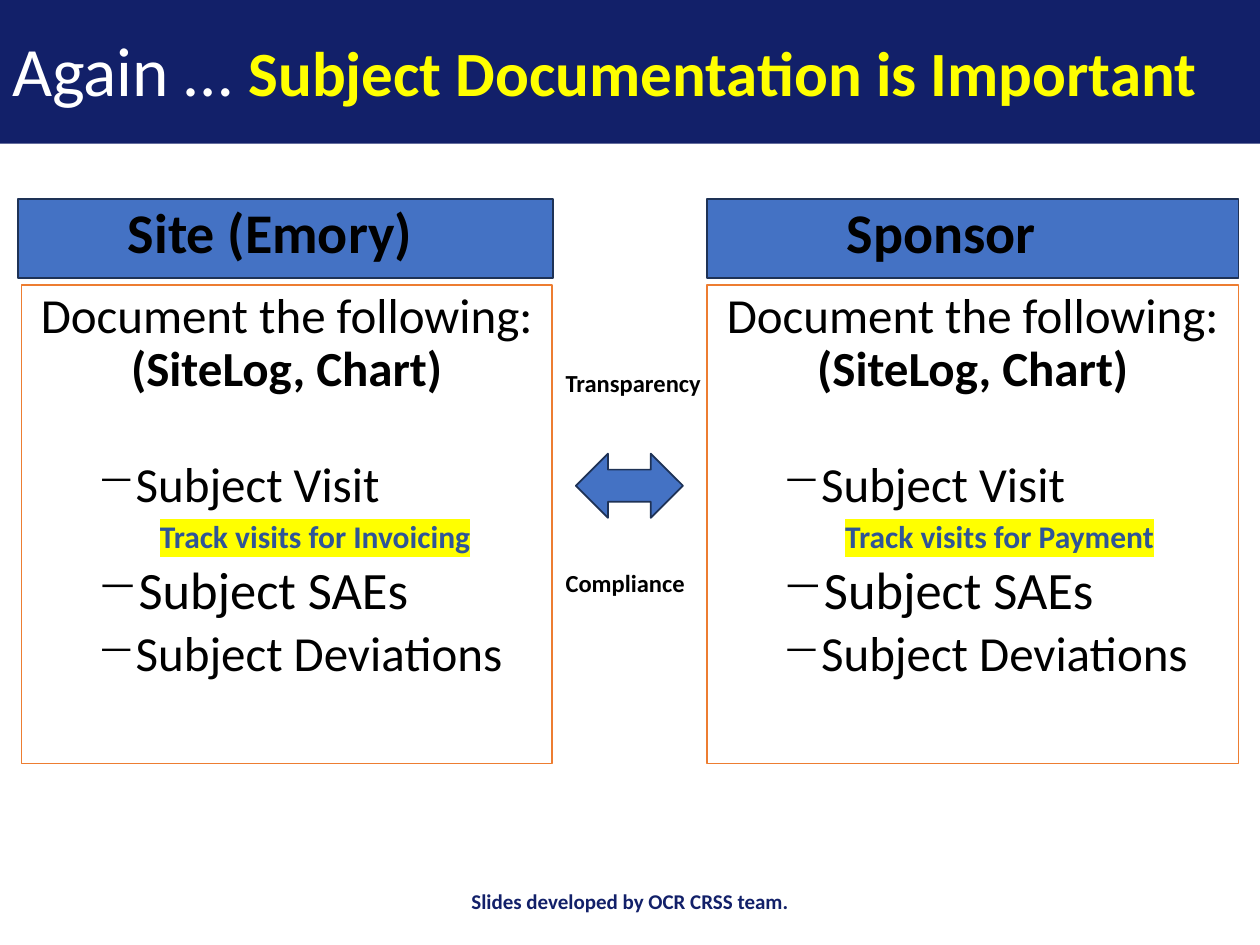
from lxml import etree
from pptx import Presentation
from pptx import util as u
from pptx.dml.color import RGBColor
from pptx.enum import shapes, text
from pptx.oxml import ns

NAVY, BLUE, EDGE, ORANGE = "122069", "4472C4", "1E3256", "ED7D31"
BLACK, WHITE, YELLOW, STEEL = "000000", "FFFFFF", "FFFF00", "2F5597"
CENTER = text.PP_ALIGN.CENTER
MIDDLE = text.MSO_ANCHOR.MIDDLE
TOP = text.MSO_ANCHOR.TOP


def color(value):
    return RGBColor.from_string(value)


def add_run(paragraph, content, size=28, ink=BLACK, bold=False, highlight=None):
    run = paragraph.add_run()
    run.text = content
    font = run.font
    font.name, font.size, font.bold = "Calibri", u.Pt(size), bold
    font.color.rgb = color(ink)
    if highlight:
        mark = etree.Element(ns.qn("a:highlight"))
        etree.SubElement(mark, ns.qn("a:srgbClr"), val=highlight)
        font.fill._xPr.find(ns.qn("a:solidFill")).addnext(mark)


def format_paragraph(paragraph, align=text.PP_ALIGN.LEFT, before=0, line=0.9,
                     margin=0, indent=0, bullet=None):
    properties = paragraph._p.get_or_add_pPr()
    properties.set("marL", str(u.Inches(margin)))
    properties.set("indent", str(u.Inches(indent)))
    if bullet:
        etree.SubElement(properties, ns.qn("a:buChar"), char=bullet)
    paragraph.alignment = align
    paragraph.line_spacing = line
    paragraph.space_before = u.Pt(before)


class SlideBuilder:
    def __init__(self, slide):
        self.slide = slide

    def shape(self, kind, left, top, width, height, fill, line=None):
        shape = self.slide.shapes.add_shape(
            kind, *map(u.Inches, (left, top, width, height)))
        shape.shadow.inherit = False
        shape.fill.solid()
        shape.fill.fore_color.rgb = color(fill)
        if line:
            shape.line.color.rgb = color(line)
            shape.line.width = u.Pt(1)
        else:
            shape.line.fill.background()
        return shape

    def box(self, *place, fill, line=None):
        return self.shape(shapes.MSO_SHAPE.RECTANGLE, *place, fill, line)

    def frame(self, shape, anchor=TOP):
        frame = shape.text_frame
        frame.word_wrap = True
        frame.vertical_anchor = anchor
        return frame

    def label(self, left, top, width, height, runs, anchor=TOP, **layout):
        shape = self.slide.shapes.add_textbox(
            *map(u.Inches, (left, top, width, height)))
        paragraph = self.frame(shape, anchor).paragraphs[0]
        format_paragraph(paragraph, **layout)
        for content, style in runs:
            add_run(paragraph, content, **style)

    def header(self, left, width, title):
        shape = self.box(left, 1.58, width, 0.63, fill=BLUE, line=EDGE)
        paragraph = self.frame(shape).paragraphs[0]
        format_paragraph(paragraph, align=CENTER)
        add_run(paragraph, title + "\t", size=32, bold=True)

    def panel(self, left, width, purpose):
        shape = self.box(left, 2.26, width, 3.8, fill=WHITE, line=ORANGE)
        frame = self.frame(shape)
        intro = frame.paragraphs[0]
        format_paragraph(intro, align=CENTER)
        add_run(intro, "Document the following: ")
        add_run(intro, "(SiteLog, Chart)", bold=True)

        item = dict(margin=0.75, indent=-0.25, bullet="−")
        note = dict(size=18, ink=STEEL, bold=True, highlight=YELLOW)
        lines = [
            ("Subject Visit", dict(item, before=36), {}),
            (f"Track visits for {purpose}", dict(margin=1, before=5), note),
            ("Subject SAEs", dict(item, before=5), dict(size=30)),
            ("Subject Deviations", dict(item, before=5), {}),
        ]
        for content, layout, style in lines:
            paragraph = frame.add_paragraph()
            format_paragraph(paragraph, **layout)
            add_run(paragraph, content, **style)


def main():
    presentation = Presentation()
    presentation.slide_width = u.Inches(10)
    presentation.slide_height = u.Inches(7.5)
    slide = presentation.slides.add_slide(presentation.slide_layouts[6])
    builder = SlideBuilder(slide)

    # Title band
    builder.box(0, 0, 10, 1.14, fill=NAVY)
    builder.label(0, 0.08, 9.92, 1.02, [
        ("Again … ", dict(size=39.6, ink=WHITE)),
        ("Subject Documentation is Important",
         dict(size=36, ink=YELLOW, bold=True)),
    ], anchor=MIDDLE)

    # Site and sponsor columns
    builder.panel(0.17, 4.21, "Invoicing")
    builder.panel(5.61, 4.22, "Payment")
    builder.header(0.14, 4.25, "Site (Emory)")
    builder.header(5.61, 4.22, "Sponsor")

    # Exchange between the columns
    for top, word in ((2.87, "Transparency"), (4.46, "Compliance")):
        builder.label(4.39, top, 1.59, 0.34,
                      [(word, dict(size=14, bold=True))], line=1)
    builder.shape(shapes.MSO_SHAPE.LEFT_RIGHT_ARROW,
                  4.57, 3.6, 0.85, 0.51, BLUE, EDGE)

    # Footer
    builder.label(3.31, 6.95, 3.38, 0.4, [
        ("Slides developed by OCR CRSS team.",
         dict(size=12, ink=NAVY, bold=True)),
    ], anchor=MIDDLE, align=CENTER, line=1)

    presentation.save("out.pptx")


if __name__ == "__main__":
    main()
